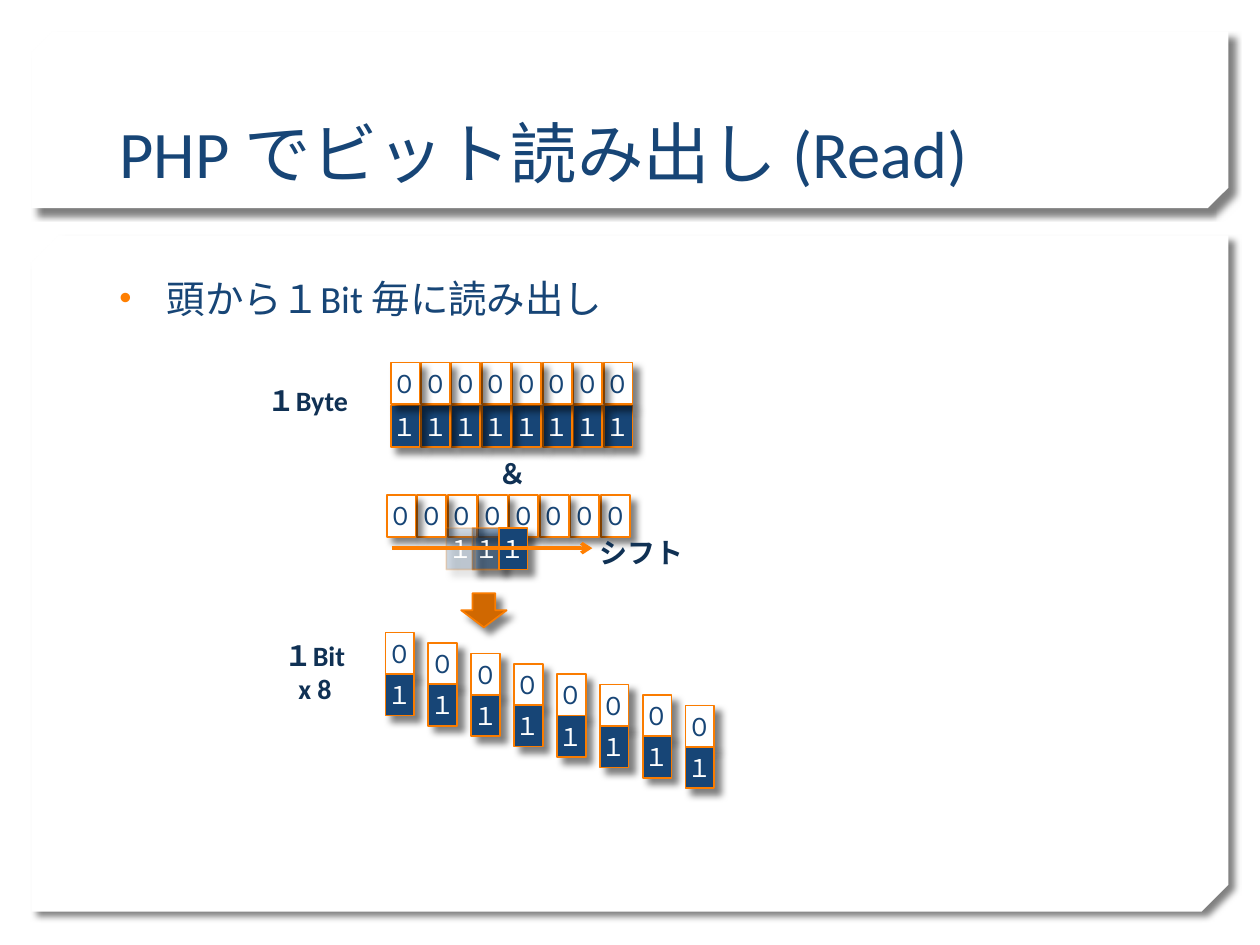
from lxml.etree import SubElement
from pptx import Presentation
from pptx.dml.color import RGBColor
from pptx.enum.shapes import MSO_CONNECTOR, MSO_SHAPE
from pptx.enum.text import MSO_ANCHOR, MSO_AUTO_SIZE, PP_ALIGN
from pptx.oxml.ns import qn
from pptx.util import Pt

# Content
TITLE = "PHP でビット読み出し (Read)"
POINT = "頭から１Bit 毎に読み出し"
# text, left, top, width, height
LABELS = [
    ("シフト", 333.5, 301.5, 66, 28),
    ("＆", 260, 256.5, 66, 28),
    ("１Byte", 129, 206, 94, 45),
    ("１Bit\nx 8", 133, 361.5, 94, 45),
]
# left, top, width, height, snip
CARDS = [(18, 134.5, 684, 386.5, 0.04), (18, 18, 684, 101, 0.117)]
SHIFTS = [(270, 50), (255, 20), (285, 100)]  # left, opacity in percent
BITS = 8

# Style
FONT = "Calibri"
NAVY = RGBColor(0x17, 0x45, 0x76)
DARK = RGBColor(0x10, 0x31, 0x54)
WHITE = RGBColor(0xFF, 0xFF, 0xFF)
EDGE = RGBColor(0xFA, 0x7C, 0x00)
RUST = RGBColor(0xD0, 0x68, 0x01)
ORANGE = RGBColor(0xFF, 0x7F, 0x01)
CELL_W, CELL_H, TEXT_W = 16.5, 23.75, 26


def write(frame, text, size, color, bold=False, align=PP_ALIGN.CENTER,
          anchor=MSO_ANCHOR.MIDDLE, space=None):
    frame.word_wrap = True
    frame.auto_size = MSO_AUTO_SIZE.NONE
    frame.vertical_anchor = anchor
    frame.text = text
    for para in frame.paragraphs:
        para.alignment = align
        for run in para.runs:
            font = run.font
            font.name, font.size, font.bold = FONT, Pt(size), bold
            font.color.rgb = color
            if space is not None:
                run._r.get_or_add_rPr().set("spc", str(space))


def place(shape, *box):
    shape.left, shape.top, shape.width, shape.height = map(Pt, box)


def fade(fill, percent):
    for color in fill.iter(qn("a:srgbClr")):
        SubElement(color, qn("a:alpha"), val=str(percent * 1000))


def draw(shapes, kind, box, fill, line=None, opaque=100):
    shape = shapes.add_shape(kind, *map(Pt, box))
    shape.fill.solid()
    shape.fill.fore_color.rgb = fill
    if line is None:
        shape.line.fill.background()
    else:
        shape.line.color.rgb = line
        shape.line.width = Pt(1)
    props = shape._element.spPr
    if opaque < 100:
        fade(props, opaque)
    # Soft shadow to the lower right
    shape.shadow.inherit = False
    cast = SubElement(props.find(qn("a:effectLst")), qn("a:outerShdw"),
                      blurRad=str(Pt(4)), dist=str(Pt(5)), dir="2700000",
                      algn="tl", rotWithShape="0")
    SubElement(cast, qn("a:srgbClr"), val="000000")
    fade(cast, 50)
    return shape


def label(shapes, text, box, size, color, **look):
    write(shapes.add_textbox(*map(Pt, box)).text_frame, text, size, color,
          **look)


def cell(shapes, digit, left, top, opaque=100):
    fill, ink = (NAVY, WHITE) if digit == "１" else (WHITE, NAVY)
    draw(shapes, MSO_SHAPE.RECTANGLE, (left, top, CELL_W, CELL_H), fill,
         EDGE, opaque)
    label(shapes, digit, (left - 6, top, TEXT_W, CELL_H), 14, ink, space=-100)


def main():
    deck = Presentation()
    deck.slide_width, deck.slide_height = Pt(720), Pt(540)
    slide = deck.slides.add_slide(deck.slide_layouts[1])
    shapes = slide.shapes

    # Cards behind everything
    for spot, (*box, snip) in enumerate(CARDS, 2):
        card = draw(shapes, MSO_SHAPE.SNIP_2_DIAG_RECTANGLE, box, WHITE)
        card.adjustments[0], card.adjustments[1] = 0, snip
        card._element.spPr.find(qn("a:xfrm")).set("flipV", "1")
        shapes._spTree.insert(spot, card._element)

    # Title and bullet
    title, body = shapes.title, slide.placeholders[1]
    place(title, 61, 23, 597, 90)
    write(title.text_frame, TITLE, 38, NAVY, align=PP_ALIGN.LEFT,
          anchor=MSO_ANCHOR.BOTTOM)
    place(body, 61, 153.5, 597, 315)
    write(body.text_frame, POINT, 22, NAVY, align=PP_ALIGN.LEFT,
          anchor=MSO_ANCHOR.TOP)
    para = body.text_frame.paragraphs[0]
    para.space_before = Pt(20)
    props = para._p.get_or_add_pPr()
    props.set("marL", str(Pt(27)))
    props.set("indent", str(-Pt(27)))
    tint = SubElement(props, qn("a:buClr"))
    SubElement(tint, qn("a:srgbClr"), val=str(ORANGE))
    SubElement(props, qn("a:buSzPct"), val="90000")
    SubElement(props, qn("a:buFont"), typeface="Arial")
    SubElement(props, qn("a:buChar"), char="•")

    # One byte: a group for each bit, right to left
    for i in reversed(range(BITS)):
        group = shapes.add_group_shape().shapes
        left = 223.25 + 17.4 * i
        cell(group, "１", left, 231.75)
        cell(group, "０", left, 207.25)

    # Mask row, and the one that shifts along it
    for i in reversed(range(BITS)):
        cell(shapes, "０", 221 + 17.5 * i, 283)

    # Single bits in steps
    for i in range(BITS):
        left, top = 220.25 + 24.5 * i, 361.5 + 5.95 * i
        cell(shapes, "０", left, top)
        cell(shapes, "１", left, top + 23.6)

    for text, *box in LABELS:
        label(shapes, text, box, 16, DARK, bold=True)
    draw(shapes, MSO_SHAPE.DOWN_ARROW, (263.5, 339, 26, 19.5), RUST, EDGE)
    for left, opaque in SHIFTS:
        cell(shapes, "１", left, 301.75, opaque)

    # Shift arrow
    arrow = shapes.add_connector(MSO_CONNECTOR.STRAIGHT, Pt(224), Pt(313.25),
                                 Pt(338.5), Pt(313.25))
    arrow.line.color.rgb = ORANGE
    arrow.line.width = Pt(2)
    SubElement(arrow.line._get_or_add_ln(), qn("a:tailEnd"), type="arrow")
    SubElement(arrow._element.spPr, qn("a:effectLst"))

    deck.save("out.pptx")


if __name__ == "__main__":
    main()
